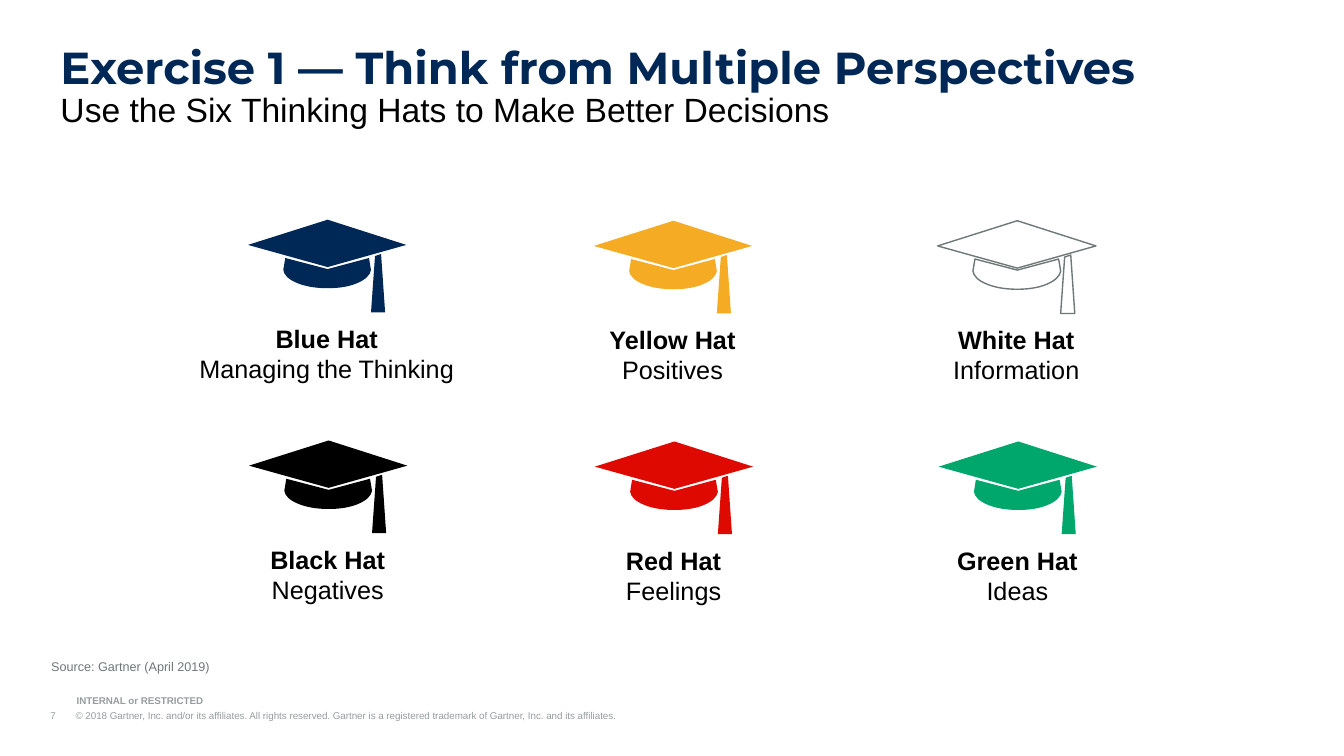
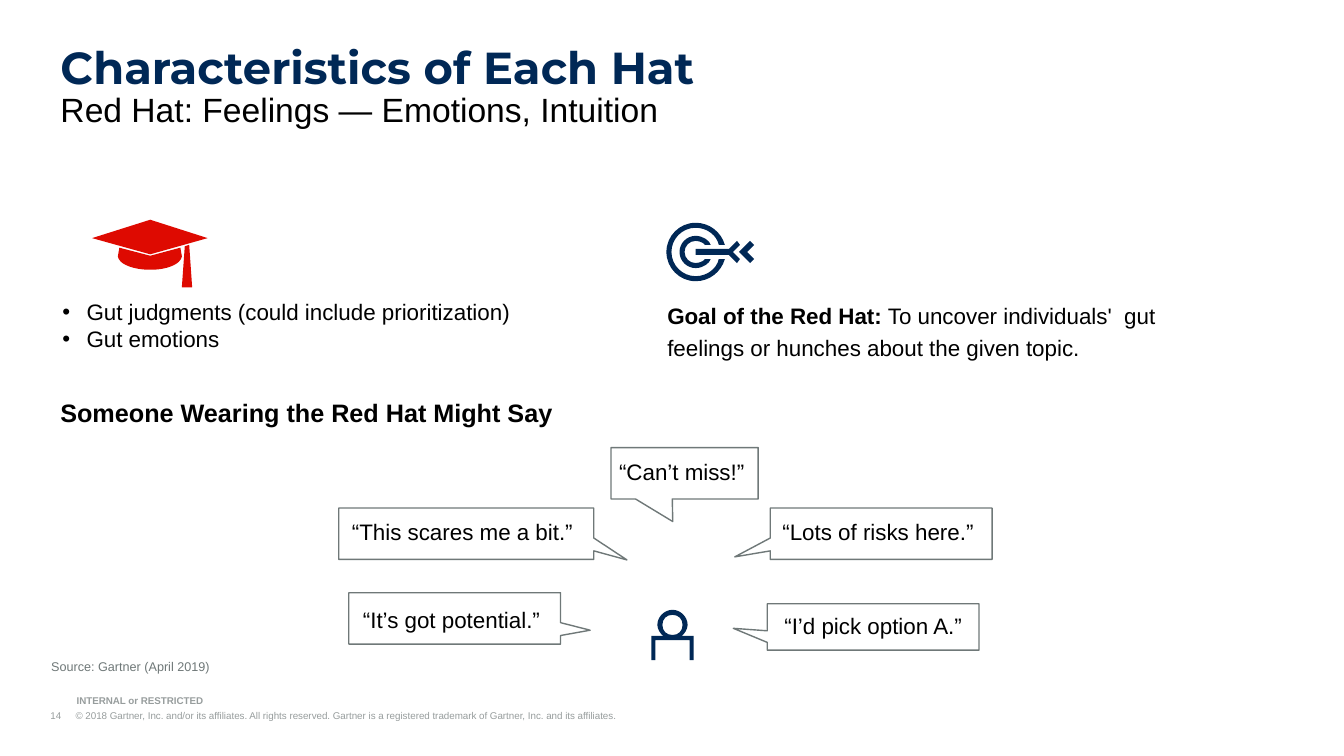
from copy import deepcopy
from pptx import Presentation
from pptx.dml.color import RGBColor
from pptx.enum import shapes, text
from pptx.oxml import parse_xml
from pptx.oxml.ns import nsdecls, qn
from pptx.util import Inches, Pt

NAVY, BLACK, WHITE, RED = "002856", "000000", "FFFFFF", "DE0A01"
GRAY, PALE = "6F7878", "979D9D"
SOURCE = "Source: Gartner (April 2019)"
MARK = "INTERNAL or RESTRICTED"
RIGHTS = ("© 2018 Gartner, Inc. and/or its affiliates. All rights reserved. "
          "Gartner is a registered trademark of Gartner, Inc. and its affiliates.")

SPOTS = [(3.25, 2.18), (6.68, 2.19), (10.09, 2.19)]
HATS = [
    ("Blue Hat", "Managing the Thinking", NAVY, 2.75),
    ("Yellow Hat", "Positives", "F5AB23", 1.46),
    ("White Hat", "Information", WHITE, 1.46),
    ("Black Hat", "Negatives", BLACK, 1.35),
    ("Red Hat", "Feelings", RED, 1.18),
    ("Green Hat", "Ideas", "00A76D", 1.41),
]
TRAITS = ["Gut judgments (could include prioritization)", "Gut emotions"]
GOAL = [("Goal of the Red Hat:", True),
        (" To uncover individuals'  gut feelings or hunches about the given topic.", False)]
QUOTES = [
    ("“It’s got potential.”", (3.6, 6.01, 1.83, 0.27), (3.46, 5.88, 2.1, 0.51), (0.64, 0.23)),
    ("“I’d pick option A.”", (7.78, 6.07, 1.86, 0.3), (7.61, 5.99, 2.1, 0.46), (-0.66, 0.03)),
    ("“Can’t miss!”", (6.14, 4.55, 1.33, 0.3), (6.06, 4.44, 1.46, 0.51), (-0.08, 0.94)),
    ("“This scares me a bit.”", (3.49, 5.14, 2.34, 0.27), (3.36, 5.04, 2.53, 0.51), (0.63, 0.51)),
    ("“Lots of risks here.”", (7.76, 5.14, 2.08, 0.37), (7.64, 5.04, 2.2, 0.51), (-0.66, 0.45)),
]

BOARD = [(0, 0.47), (-0.79, 0.25), (0, 0), (0.78, 0.25)]
CROWN = [(0.41, 0.38), (0, 0.49), (-0.42, 0.38), (-0.44, 0.5),
         (-0.44, 0.52, -0.42, 0.55, -0.4, 0.57),
         (-0.37, 0.6, -0.25, 0.68, 0, 0.68),
         (0.25, 0.68, 0.36, 0.6, 0.39, 0.57),
         (0.41, 0.55, 0.43, 0.52, 0.43, 0.5)]
TASSEL = [(0.57, 0.92), (0.43, 0.92), (0.47, 0.36), (0.53, 0.34)]
ARROW = [(0.44, -0.07), (0.41, -0.11), (0.33, -0.03), (0, -0.03),
         (0, 0.03), (0.33, 0.03), (0.41, 0.11), (0.44, 0.07), (0.37, 0)]
BARB = [(0.58, -0.07), (0.54, -0.11), (0.43, 0), (0.54, 0.11), (0.58, 0.07), (0.51, 0)]
BODY = [(0.09, 0.11), (0.12, 0.09, 0.15, 0.04, 0.15, 0),
        (0.15, -0.08, 0.08, -0.15, 0, -0.15), (-0.08, -0.15, -0.15, -0.08, -0.15, 0),
        (-0.15, 0.04, -0.12, 0.09, -0.09, 0.11), (-0.21, 0.11), (-0.21, 0.35),
        (-0.17, 0.35), (-0.17, 0.15), (0.17, 0.15), (0.17, 0.35), (0.21, 0.35), (0.21, 0.11)]
FACE = [(-0.1, 0), (-0.1, -0.06, -0.06, -0.1, 0, -0.1), (0.06, -0.1, 0.1, -0.06, 0.1, 0),
        (0.1, 0.06, 0.06, 0.1, 0, 0.1), (-0.06, 0.1, -0.1, 0.06, -0.1, 0)]


def color(code):
    return RGBColor.from_string(code)


def sweep(rad, x, way):
    quad = [(x, 0.07), (0.87 * rad, 0.69 * rad, 0.47 * rad, rad, 0, rad),
            (-0.55 * rad, rad, -rad, 0.55 * rad, -rad, 0),
            (-rad, -0.55 * rad, -0.55 * rad, -rad, 0, -rad),
            (0.47 * rad, -rad, 0.87 * rad, -0.69 * rad, x, -0.07)]
    return [tuple(v * way if i % 2 else v for i, v in enumerate(part)) for part in quad]


def ring(outer, edge, inner, rim):
    return sweep(outer, edge, 1) + sweep(inner, rim, -1)


def paint(shape, fill=None, line=None):
    shape.shadow.inherit = False
    if fill:
        shape.fill.solid()
        shape.fill.fore_color.rgb = color(fill)
    else:
        shape.fill.background()
    if line:
        shape.line.color.rgb = color(line)
        shape.line.width = Pt(1)
    else:
        shape.line.fill.background()


def bend(shape, loops):
    edges = iter(list(shape._element.iter(qn("a:lnTo"))))
    for part in (part for loop in loops for part in loop[1:]):
        edge = next(edges)
        if len(part) == 6:
            edge.addprevious(parse_xml("<a:cubicBezTo %s/>" % nsdecls("a")))
            arc = edge.getprevious()
            for item in (edge, next(edges), next(edges)):
                arc.append(item[0])
                item.getparent().remove(item)


def draw(host, loops, x, y, fill, line=None, scale=1):
    pen = None
    for loop in loops:
        dots = [(Inches(x + scale * part[i]), Inches(y + scale * part[i + 1]))
                for part in loop for i in range(0, len(part), 2)]
        if pen:
            pen.move_to(*dots[0])
        else:
            pen = host.build_freeform(*dots[0])
        pen.add_line_segments(dots[1:], close=True)
    shape = pen.convert_to_shape()
    bend(shape, loops)
    paint(shape, fill, line)


def add_hat(slide, x, y, fill, scale=1):
    group = slide.shapes.add_group_shape()
    line = GRAY if fill == WHITE else None
    for loop in (BOARD, CROWN, TASSEL):
        draw(group.shapes, [loop], x, y, fill, line, scale)


def style(run, size, code=BLACK, bold=False, face="Arial"):
    font = run.font
    font.size, font.bold, font.name = Pt(size), bold, face
    font.color.rgb = color(code)


def add_text(slide, box, lines, size, code=BLACK, bold=False, wrap=True, flush=False):
    frame = slide.shapes.add_textbox(*map(Inches, box)).text_frame
    frame.word_wrap = wrap
    if flush:
        frame.margin_left = frame.margin_right = frame.margin_top = frame.margin_bottom = 0
    frame.text = "\n".join(lines)
    for para in frame.paragraphs:
        for run in para.runs:
            style(run, size, code, bold)
    return frame


def indent(para, size, *marks):
    props = para._p.get_or_add_pPr()
    props.set("marL", str(Inches(size)))
    props.set("indent", str(-Inches(size)))
    for tag, inner in marks:
        props.append(parse_xml("<a:%s %s %s" % (tag, nsdecls("a"), inner)))


def add_foot(slide, box, words, bold=False):
    frame = add_text(slide, box, [words], 7, PALE, bold, flush=True)
    frame.vertical_anchor = text.MSO_ANCHOR.BOTTOM
    indent(frame.paragraphs[0], 0.25,
           ("tabLst", '><a:tab pos="%d" algn="l"/></a:tabLst>' % Inches(0.25)))


def add_page(deck, number, head, sub):
    slide = deck.slides.add_slide(deck.slide_layouts[5])
    title = slide.shapes.title
    title.left, title.top, title.width, title.height = map(Inches, (0.5, 0.4, 12.33, 0.48))
    frame = title.text_frame
    frame.word_wrap = True
    frame.auto_size = text.MSO_AUTO_SIZE.NONE
    frame.vertical_anchor = text.MSO_ANCHOR.TOP
    para = frame.paragraphs[0]
    para.text = head + "\v" + sub
    para.alignment = text.PP_ALIGN.LEFT
    para.line_spacing, para.space_after = 0.9, Pt(12)
    first, second = para.runs
    style(first, 32, NAVY, True, "Montserrat")
    style(second, 24)
    para._p.find(qn("a:br")).insert(0, deepcopy(first._r.rPr))

    add_foot(slide, (0.5, 7.04, 7.99, 0.12), "%d\t%s" % (number, RIGHTS))
    add_foot(slide, (0.76, 6.89, 2.53, 0.12), MARK, True)
    add_text(slide, (0.41, 6.49, 10.15, 0.25), [SOURCE], 9, GRAY)
    return slide


def add_grid(slide):
    for i, (name, role, fill, width) in enumerate(HATS):
        row, col = divmod(i, 3)
        x, y = SPOTS[col][0] + 0.01 * row, SPOTS[col][1] + 2.19 * row
        add_hat(slide, x, y, fill)
        box = (x - 0.01 - width / 2, y + 0.98, width, 0.71)
        frame = add_text(slide, box, [name, role], 18, wrap=False)
        for para in frame.paragraphs:
            para.alignment = text.PP_ALIGN.CENTER
        frame.paragraphs[0].runs[0].font.bold = True


def add_traits(slide):
    add_hat(slide, 1.49, 2.18, RED, 0.73)
    frame = add_text(slide, (0.52, 2.91, 4.84, 0.64), TRAITS, 16)
    for para in frame.paragraphs:
        indent(para, 0.24, ("buClr", '><a:srgbClr val="%s"/></a:buClr>' % BLACK),
               ("buFont", 'typeface="Arial"/>'), ("buChar", 'char="•"/>'))

    para = add_text(slide, (6.52, 2.91, 5.63, 0.7), [""], 16).paragraphs[0]
    para.line_spacing = 1.16
    for words, bold in GOAL:
        run = para.add_run()
        run.text = words
        style(run, 16, bold=bold)


def add_quotes(slide):
    add_text(slide, (0.5, 3.89, 5.13, 0.4), ["Someone Wearing the Red Hat Might Say"], 18,
             bold=True, wrap=False)
    draw(slide.shapes, [BODY, FACE], 6.67, 6.2, NAVY)
    for words, place, box, tip in QUOTES:
        call = slide.shapes.add_shape(shapes.MSO_SHAPE.RECTANGULAR_CALLOUT, *map(Inches, box))
        call.adjustments[0], call.adjustments[1] = tip
        paint(call, line=GRAY)
        add_text(slide, place, [words], 16, flush=True)
    target = [ring(0.29, 0.29, 0.24, 0.23), ring(0.16, 0.15, 0.11, 0.09), ARROW, BARB]
    draw(slide.shapes, target, 6.9, 2.5, NAVY)


def main():
    deck = Presentation()
    deck.slide_width, deck.slide_height = Inches(13.33), Inches(7.5)
    add_grid(add_page(deck, 7, "Exercise 1 — Think from Multiple Perspectives",
                      "Use the Six Thinking Hats to Make Better Decisions"))
    slide = add_page(deck, 14, "Characteristics of Each Hat",
                     "Red Hat: Feelings — Emotions, Intuition")
    add_traits(slide)
    add_quotes(slide)
    deck.save("out.pptx")


if __name__ == "__main__":
    main()
